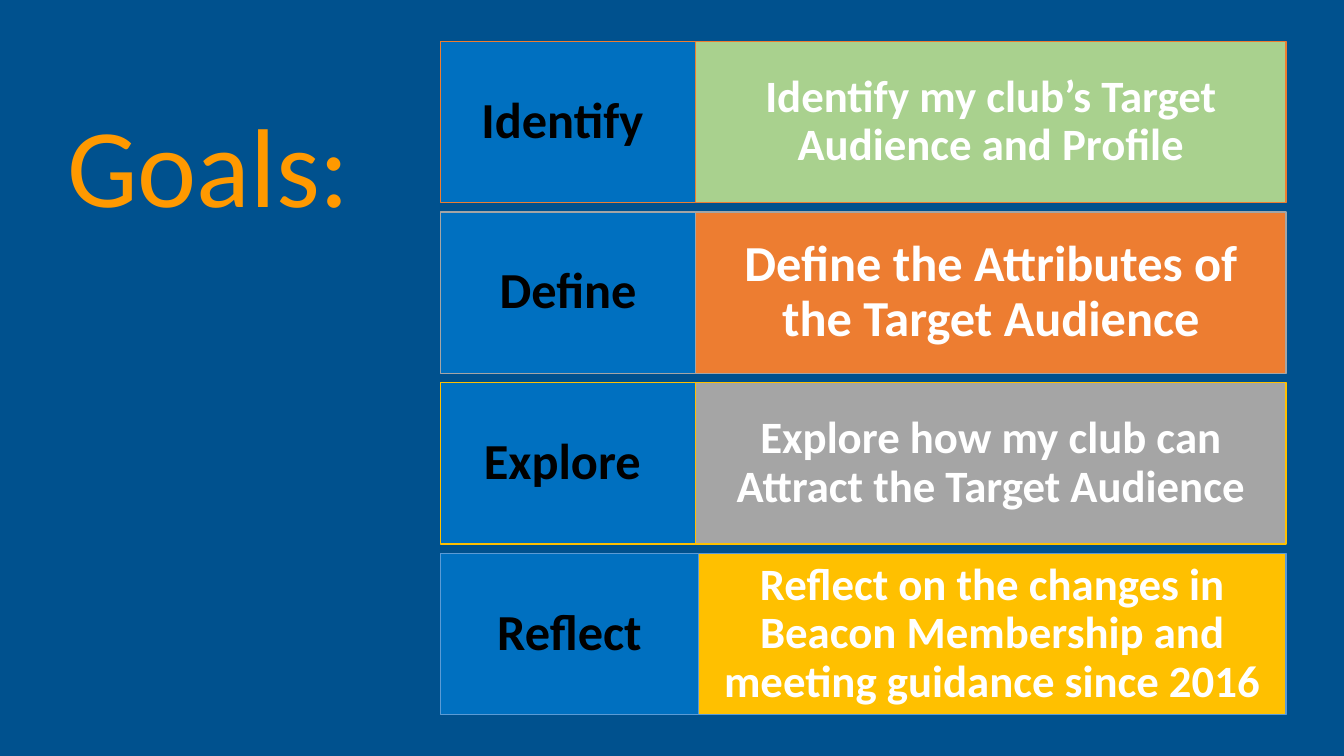
from lxml import etree
from pptx import Presentation, util as u
from pptx.dml.color import RGBColor
from pptx.enum import shapes, text
from pptx.oxml.ns import qn

Pt = u.Pt


def rgb(value):
    return RGBColor.from_string(value)


class GoalsSlide:
    font = "Calibri"
    background = "00518E"
    label_fill = "0070C0"

    def __init__(self, prs):
        self.s = prs.slides.add_slide(prs.slide_layouts[6])
        fill = self.s.background.fill
        fill.solid()
        fill.fore_color.rgb = rgb(self.background)

    def set_text(self, sp, words, size, color, bold=False, align=text.PP_ALIGN.CENTER):
        tf = sp.text_frame
        tf.word_wrap = True
        tf.vertical_anchor = text.MSO_ANCHOR.MIDDLE
        tf.text = words
        p = tf.paragraphs[0]
        p.alignment = align
        p.line_spacing = 0.9
        r = p.runs[0]
        r.font.name = self.font
        r.font.size = Pt(size)
        r.font.bold = bold
        r.font.color.rgb = rgb(color)
        return r

    def title(self, words, box, color, outline):
        sp = self.s.shapes.add_textbox(*map(Pt, box))
        r = self.set_text(sp, words, 80, color, align=text.PP_ALIGN.LEFT)
        ln = etree.Element(qn("a:ln"), w=str(Pt(0.75)))
        solid = etree.SubElement(ln, qn("a:solidFill"))
        etree.SubElement(solid, qn("a:srgbClr"), val=outline)
        r._r.get_or_add_rPr().insert(0, ln)

    def cell(self, words, box, fill, line, size, color, insets):
        sp = self.s.shapes.add_shape(shapes.MSO_SHAPE.RECTANGLE, *map(Pt, box))
        sp.shadow.inherit = False
        sp.fill.solid()
        sp.fill.fore_color.rgb = rgb(fill)
        sp.line.color.rgb = rgb(line)
        sp.line.width = Pt(1)
        tf = sp.text_frame
        side, end = map(Pt, insets)
        tf.margin_left = tf.margin_right = side
        tf.margin_top = tf.margin_bottom = end
        self.set_text(sp, words, size, color, bold=True)

    def goal(self, top, split, label, words, size, fill, line):
        """Draw one row: a description to the right of split, a label to its left."""
        left, right, height = 314.6, 918.7, 115.2
        self.cell(words, (split, top, right - split, height),
                  fill, line, size, "FFFFFF", (7.9, 29.5))
        self.cell(label, (left, top, split - left, height),
                  self.label_fill, line, 36, "000000", (5.8, 11.5))


GOALS = [
    (497, "Identify ", "Identify my club’s Target Audience and Profile",
     32, "A9D18E", "ED7D31"),
    (497, "Define", "Define the Attributes of the Target Audience",
     36, "ED7D31", "A5A5A5"),
    (497, "Explore ", "Explore how my club can Attract the Target Audience",
     32, "A5A5A5", "FFC000"),
    (499, "Reflect", "Reflect on the changes in Beacon Membership and meeting guidance since 2016",
     32, "FFC000", "5B9BD5"),
]


def main():
    prs = Presentation()
    prs.slide_width, prs.slide_height = Pt(960), Pt(540)
    slide = GoalsSlide(prs)
    slide.title("Goals:", (41, 24.5, 250, 195), "FF9900", "FFC000")
    first_top, pitch = 29.5, 121.95
    for i, goal in enumerate(GOALS):
        slide.goal(first_top + i * pitch, *goal)
    prs.save("out.pptx")


if __name__ == "__main__":
    main()
